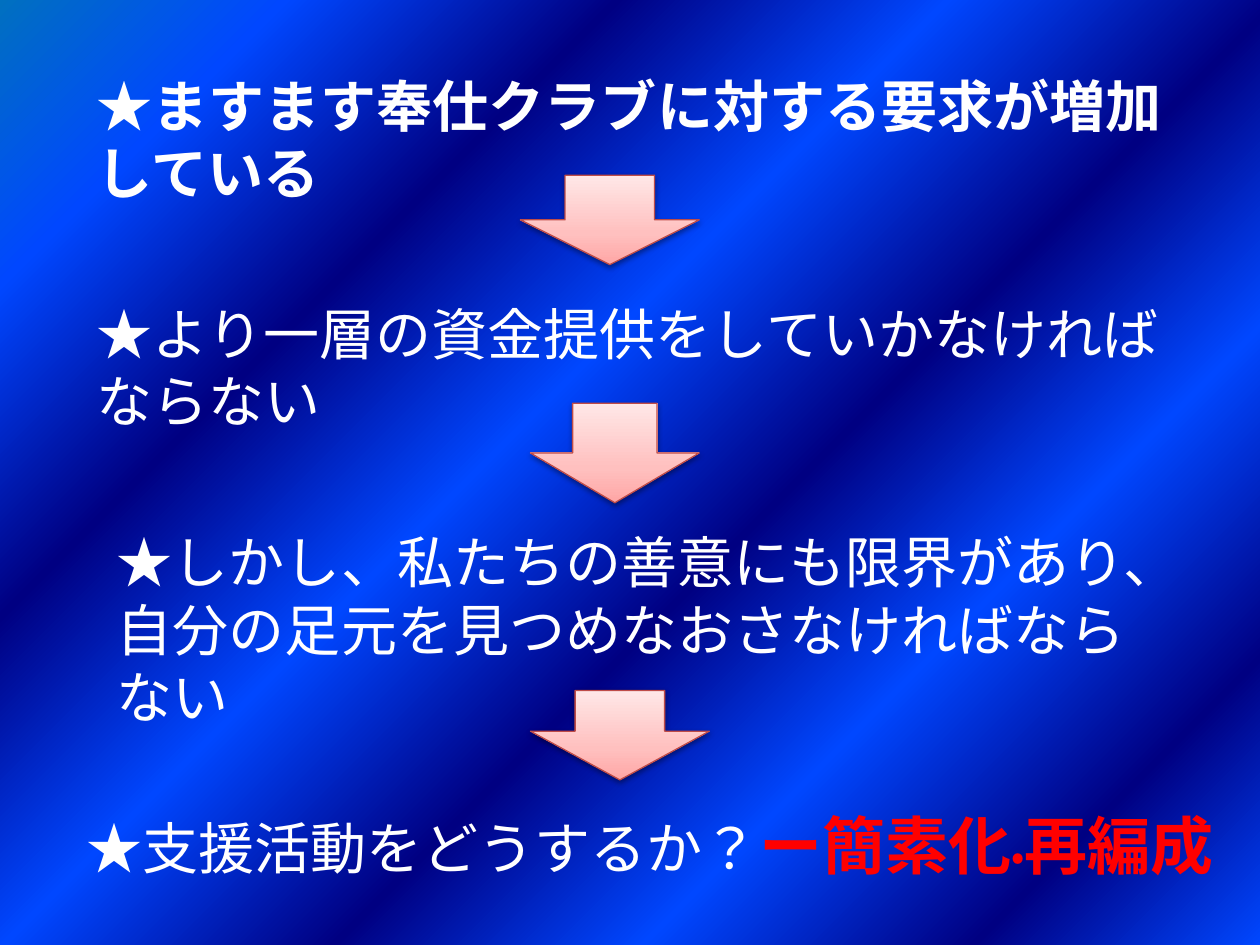
from dataclasses import dataclass

from lxml.etree import SubElement
from pptx import Presentation
from pptx.dml.color import RGBColor
from pptx.enum.lang import MSO_LANGUAGE_ID
from pptx.enum.shapes import MSO_SHAPE
from pptx.enum.text import MSO_AUTO_SIZE
from pptx.oxml.ns import qn
from pptx.util import Inches, Pt

BACKGROUND_STOPS = [
    (0, "0070C0"), (13, "0047FF"), (28, "000082"), (43, "0047FF"),
    (58, "000082"), (72, "0047FF"), (87, "000082"), (100, "0047FF"),
]
ARROW_STOPS = [(0, "FFA6A5"), (35, "FFC0BF"), (100, "FFE7E7")]
ANSWER = {"size": 36, "tint": "FF0000", "bold": True}


def color(value):
    """Turn a hex string into a colour."""
    return RGBColor.from_string(value)


def add_span(para, text, size=32, tint="FFFFFF", bold=False, font="Calibri"):
    """Append formatted Japanese text to a paragraph."""
    span = para.add_run()
    span.text = text
    span.font.language_id = MSO_LANGUAGE_ID.JAPANESE
    span.font.name = font
    span.font.size = Pt(size)
    span.font.bold = bold
    span.font.color.rgb = color(tint)


def set_gradient(owner, fill, stops, clockwise):
    """Give a fill a linear gradient with any number of stops."""
    fill.gradient()
    fill.gradient_angle = (360 - clockwise) % 360
    stop_list = next(owner.element.iter(qn("a:gsLst")))
    for old in list(stop_list):
        stop_list.remove(old)
    for position, tint in stops:
        stop = SubElement(stop_list, qn("a:gs"), pos=str(position * 1000))
        SubElement(stop, qn("a:srgbClr"), val=tint)


def set_shadow(shape):
    """Put a soft dark shadow just below a shape."""
    shape.shadow.inherit = False
    effects = next(shape.element.iter(qn("a:effectLst")))
    shadow = SubElement(
        effects, qn("a:outerShdw"), blurRad=str(Pt(3.15)), dist=str(Pt(1.57)),
        dir="5400000", rotWithShape="0",
    )
    tint = SubElement(shadow, qn("a:srgbClr"), val="000000")
    SubElement(tint, qn("a:alpha"), val="38000")


@dataclass
class SlideBuilder:
    """Hold the current slide and its style."""

    page: object
    outline: str = "BF4C48"

    def background(self):
        """Fill the page with diagonal blue bands."""
        set_gradient(self.page, self.page.background.fill, BACKGROUND_STOPS, 45)

    def statement(self, left, top, width, height, *spans):
        """Add a wrapped line of thought made of (text, format) spans."""
        box = self.page.shapes.add_textbox(
            Inches(left), Inches(top), Inches(width), Inches(height))
        frame = box.text_frame
        frame.word_wrap = True
        frame.auto_size = MSO_AUTO_SIZE.SHAPE_TO_FIT_TEXT
        for text, style in spans:
            add_span(frame.paragraphs[0], text, **style)

    def arrow(self, left, top, width, height, head=0.5):
        """Add a pink arrow that points down."""
        shape = self.page.shapes.add_shape(
            MSO_SHAPE.DOWN_ARROW,
            Inches(left), Inches(top), Inches(width), Inches(height))
        shape.adjustments[1] = head
        set_gradient(shape, shape.fill, ARROW_STOPS, 270)
        shape.line.color.rgb = color(self.outline)
        shape.line.width = Pt(0.75)
        set_shadow(shape)


def main():
    """Build the slide and save it."""
    deck = Presentation()
    deck.slide_width, deck.slide_height = Inches(10), Inches(7.5)
    builder = SlideBuilder(deck.slides.add_slide(deck.slide_layouts[6]))
    builder.background()
    builder.statement(
        0.67, 0.52, 8.82, 1.18,
        ("★ますます奉仕クラブに対する要求が増加している", {"bold": True}))
    builder.statement(
        0.67, 2.33, 8.74, 1.18,
        ("★より一層の資金提供をしていかなければならない", {}))
    builder.arrow(4.13, 1.39, 1.42, 0.71)
    builder.statement(
        0.83, 4.14, 8.58, 1.18,
        ("★しかし、私たちの善意にも限界があり、自分の足元を見つめなおさなければならない", {}))
    builder.arrow(4.21, 3.2, 1.34, 0.79)
    builder.statement(
        0.59, 6.35, 9.41, 0.71,
        ("★支援活動をどうするか？", {}),
        ("ー簡素化", ANSWER),
        ("・", {**ANSWER, "size": 20}),
        ("再編成", ANSWER))
    builder.arrow(4.21, 5.48, 1.42, 0.71, head=0.545)
    deck.save("out.pptx")


if __name__ == "__main__":
    main()
